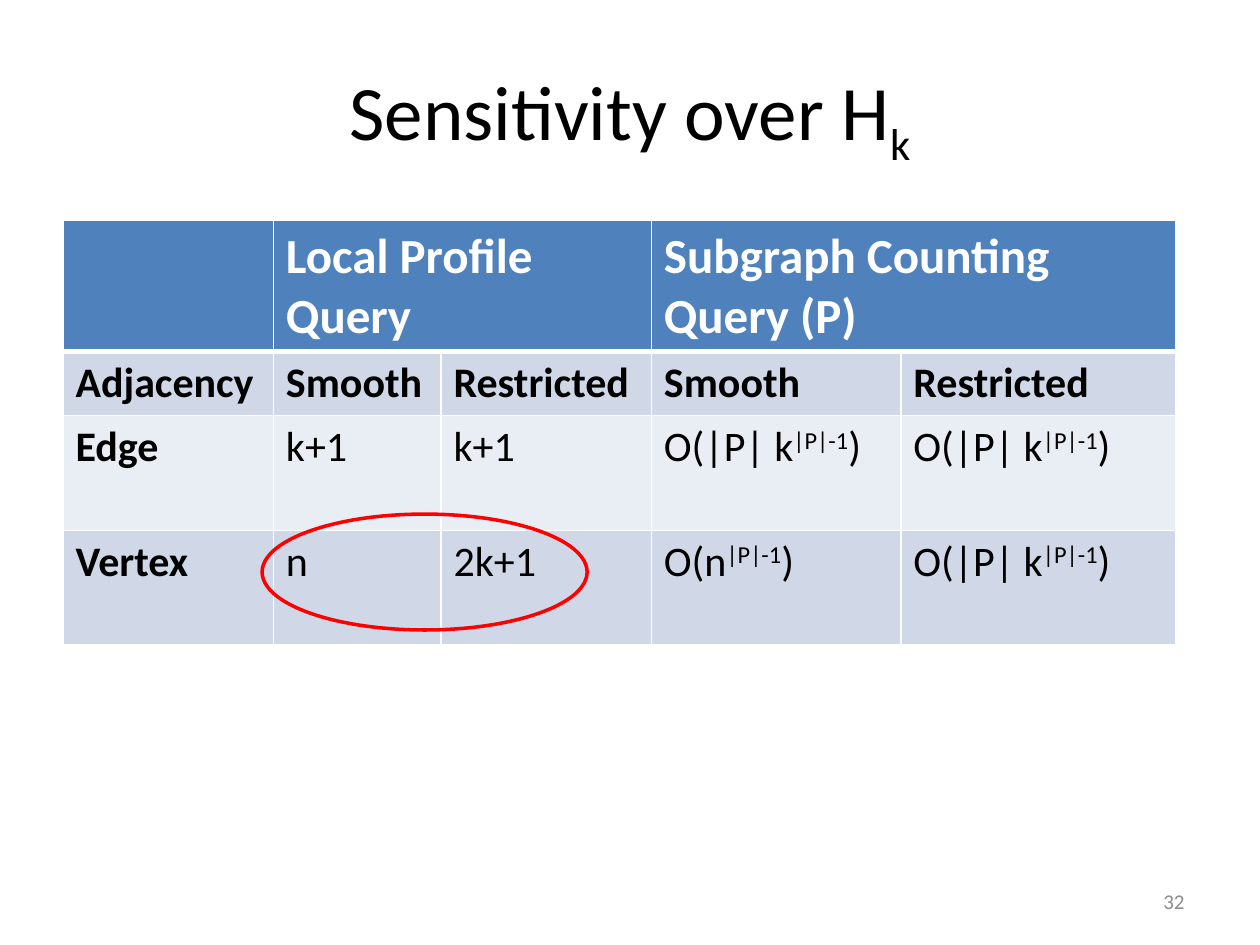
from dataclasses import dataclass

from lxml.etree import SubElement
from pptx import Presentation
from pptx.dml.color import RGBColor as RGB
from pptx.enum.shapes import MSO_SHAPE as SHAPE
from pptx.enum.text import MSO_ANCHOR as ANCHOR, PP_ALIGN as ALIGN
from pptx.oxml.ns import qn
from pptx.util import Inches, Pt


@dataclass(frozen=True)
class Theme:
    """Colours, font and type sizes of the slide."""
    font: str = "Calibri"
    black: str = "000000"
    white: str = "FFFFFF"
    grey: str = "8C8C8C"
    red: str = "FF0000"
    header: str = "4F81BD"
    bands: tuple = ("D0D8E8", "E9EDF4")
    title_pt: int = 44
    header_pt: int = 28
    body_pt: int = 24
    number_pt: int = 12


THEME = Theme()
SUB, SUPER = -25, 30


def power(base):
    """Return the runs of a bound with exponent |P|-1."""
    return [(f"O({base}", 0), ("|P|-1", SUPER), (")", 0)]


HEADINGS = {1: "Local Profile Query", 3: "Subgraph Counting Query (P)"}
BODY = [
    ["Adjacency", "Smooth", "Restricted", "Smooth", "Restricted"],
    ["Edge", "k+1", "k+1", power("|P| k"), power("|P| k")],
    ["Vertex", "n", "2k+1", power("n"), power("|P| k")],
]
COL_WIDTHS = [1.67, 1.33, 1.67, 1.98, 2.18]
ROW_HEIGHTS = [1.04, 0.51, 0.91, 0.91]


def write(tf, content, size, color, bold=False, align=ALIGN.LEFT):
    """Write a string or a list of (text, baseline) runs as one paragraph."""
    p = tf.paragraphs[0]
    p.alignment = align
    runs = [(content, 0)] if isinstance(content, str) else content
    for text, baseline in runs:
        r = p.add_run()
        r.text = text
        r.font.name = THEME.font
        r.font.size = Pt(size)
        r.font.bold = bold
        r.font.color.rgb = RGB.from_string(color)
        if baseline:
            r._r.get_or_add_rPr().set("baseline", str(baseline * 1000))


def add_text(slide, box, content, size, color, align):
    """Place a vertically centred text box in the given box."""
    tf = slide.shapes.add_textbox(*map(Inches, box)).text_frame
    tf.word_wrap = True
    tf.vertical_anchor = ANCHOR.MIDDLE
    write(tf, content, size, color, align=align)


def style_cell(cell, fill, bottom=1):
    """Give a cell white borders and a solid fill."""
    tc_pr = cell._tc.get_or_add_tcPr()
    for side, width in (("L", 1), ("R", 1), ("T", 1), ("B", bottom)):
        ln = SubElement(tc_pr, qn(f"a:ln{side}"), w=str(Pt(width)))
        solid = SubElement(ln, qn("a:solidFill"))
        SubElement(solid, qn("a:srgbClr"), val=THEME.white)
    cell.fill.solid()
    cell.fill.fore_color.rgb = RGB.from_string(fill)


def add_sensitivity_table(slide, left, top):
    """Place the sensitivity table with its top left corner as given."""
    size = (sum(COL_WIDTHS), sum(ROW_HEIGHTS))
    table = slide.shapes.add_table(
        len(ROW_HEIGHTS), len(COL_WIDTHS), *map(Inches, (left, top, *size))).table
    for col, width in zip(table.columns, COL_WIDTHS):
        col.width = Inches(width)
    for row, height in zip(table.rows, ROW_HEIGHTS):
        row.height = Inches(height)

    for cell in table.rows[0].cells:
        style_cell(cell, THEME.header, bottom=3)
    for c, heading in HEADINGS.items():
        cell = table.cell(0, c)
        cell.merge(table.cell(0, c + 1))
        write(cell.text_frame, heading, THEME.header_pt, THEME.white, bold=True)

    for i, values in enumerate(BODY):
        for c, value in enumerate(values):
            cell = table.cell(i + 1, c)
            style_cell(cell, THEME.bands[i % 2], bottom=1)
            write(cell.text_frame, value, THEME.body_pt, THEME.black,
                  bold=i == 0 or c == 0)


def add_highlight(slide, box):
    """Outline the given box with a red ellipse."""
    sp = slide.shapes.add_shape(SHAPE.OVAL, *map(Inches, box))
    sp.shadow.inherit = False
    sp.fill.background()
    sp.line.color.rgb = RGB.from_string(THEME.red)
    sp.line.width = Pt(2)


def main():
    """Build and save the slide."""
    prs = Presentation()
    prs.slide_width, prs.slide_height = Inches(10), Inches(7.5)
    slide = prs.slides.add_slide(prs.slide_layouts[6])
    add_text(slide, (0.5, 0.3, 9, 1.25), [("Sensitivity over H", 0), ("k", SUB)],
             THEME.title_pt, THEME.black, ALIGN.CENTER)
    add_sensitivity_table(slide, 0.5, 1.75)
    add_text(slide, (7.17, 6.95, 2.33, 0.4), "32",
             THEME.number_pt, THEME.grey, ALIGN.RIGHT)
    add_highlight(slide, (2.08, 4.08, 2.58, 0.92))
    prs.save("out.pptx")


if __name__ == "__main__":
    main()
